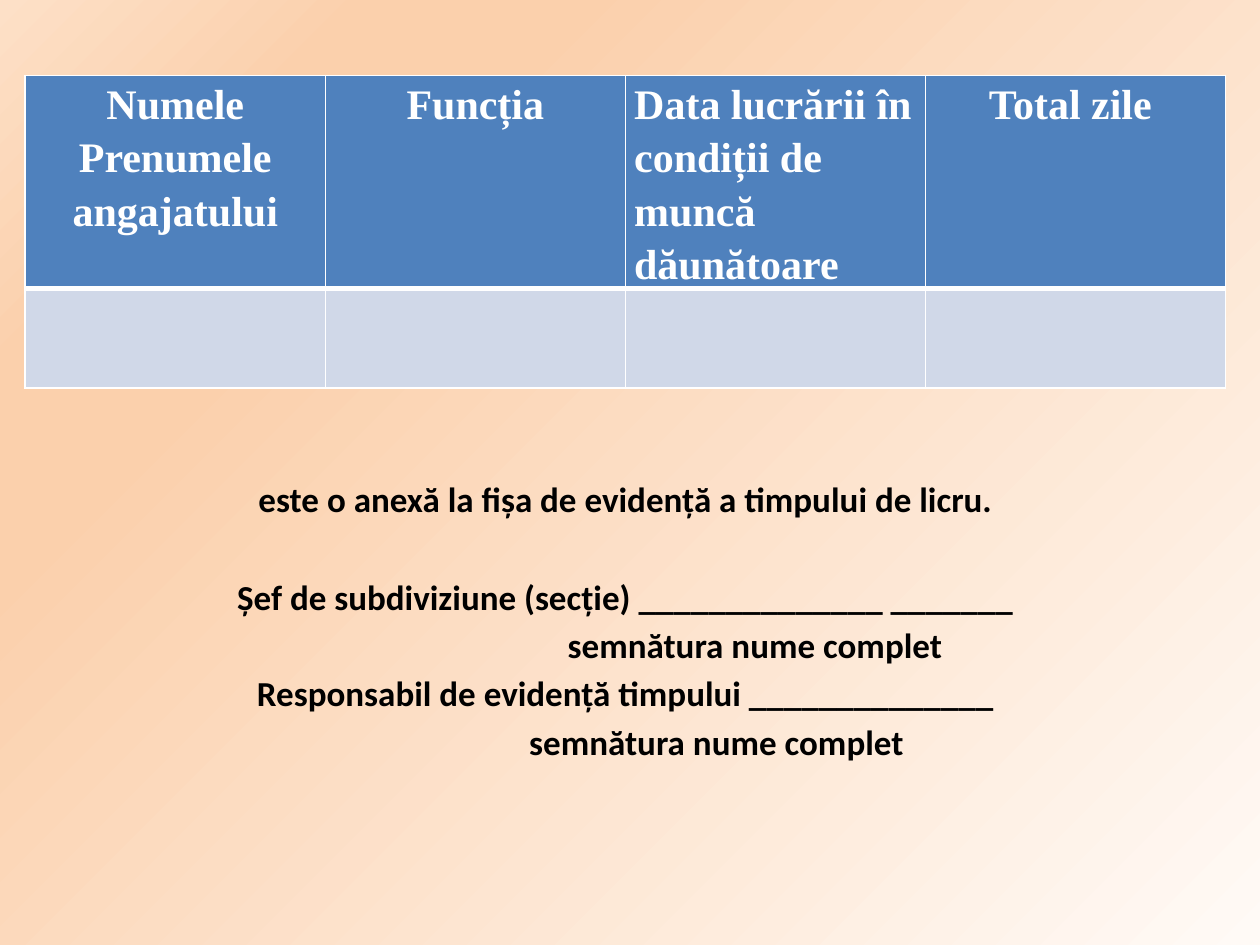
from dataclasses import dataclass

from lxml import etree
from pptx import Presentation
from pptx import util as u
from pptx.dml.color import RGBColor
from pptx.enum import text
from pptx.oxml import ns, parse_xml

WHITE = RGBColor(0xFF, 0xFF, 0xFF)
BLACK = RGBColor(0x00, 0x00, 0x00)
HEADER_BLUE = RGBColor(0x4F, 0x81, 0xBD)
ROW_BLUE = RGBColor(0xD0, 0xD8, 0xE8)
# Gradient stops: position in percent and colour
BACKGROUND_STOPS = [
    (0, RGBColor(0xFF, 0xFA, 0xF6)),
    (74, RGBColor(0xFB, 0xD0, 0xAC)),
    (83, RGBColor(0xFB, 0xD0, 0xAC)),
    (100, RGBColor(0xFD, 0xE0, 0xC7)),
]
LEFT, WIDTH = u.Pt(14.4), u.Pt(686)
CENTER, START = text.PP_ALIGN.CENTER, text.PP_ALIGN.LEFT


@dataclass
class Heading:
    label: str
    align: text.PP_ALIGN = CENTER


@dataclass
class Line:
    label: str
    before: float = 3.6
    indent: float = 0


HEADINGS = [
    Heading("Numele Prenumele angajatului"),
    Heading("Funcția"),
    Heading("Data lucrării în condiții de muncă dăunătoare", START),
    Heading("Total zile "),
]
LINES = [
    Line("este o anexă la fișa de evidență a timpului de licru.", before=0),
    Line("Șef de subdiviziune (secție) ______________ _______", before=31.6),
    Line("semnătura nume complet", indent=148),
    Line("Responsabil de evidență timpului ______________"),
    Line("semnătura nume complet", indent=104),
]


def write(para, words: str, *, font: str, size: float, color: RGBColor,
          align=CENTER, before: float = 0, spacing: float = 1.0) -> None:
    """Put bold text into a paragraph."""
    para.alignment = align
    para.space_before = u.Pt(before)
    para.line_spacing = spacing
    span = para.add_run()
    span.text = words
    span.font.name, span.font.size, span.font.bold = font, u.Pt(size), True
    span.font.color.rgb = color


def paint_background(page) -> None:
    stops = "".join(
        f'<a:gs pos="{position * 1000}"><a:srgbClr val="{color}"/></a:gs>'
        for position, color in BACKGROUND_STOPS)
    page.element.cSld.insert(0, parse_xml(
        f'<p:bg {ns.nsdecls("p", "a")}><p:bgPr><a:gradFill rotWithShape="1">'
        f'<a:gsLst>{stops}</a:gsLst><a:path path="circle">'
        '<a:fillToRect l="100000" t="100000"/></a:path></a:gradFill>'
        '<a:effectLst/></p:bgPr></p:bg>'))


def style_cell(cell, fill: RGBColor, top: float, bottom: float) -> None:
    """Set fill, margins and white borders."""
    cell.fill.solid()
    cell.fill.fore_color.rgb = fill
    cell.margin_left = cell.margin_right = u.Pt(5)
    cell.margin_top = cell.margin_bottom = 0
    borders = {"lnL": 1, "lnR": 1, "lnT": top, "lnB": bottom}
    properties = cell._tc.get_or_add_tcPr()
    for index, (side, width) in enumerate(borders.items()):
        properties.insert(index, parse_xml(
            f'<a:{side} {ns.nsdecls("a")} w="{u.Pt(width)}"><a:solidFill>'
            f'<a:srgbClr val="{WHITE}"/></a:solidFill></a:{side}>'))


def add_days_table(page) -> None:
    heights = [121.7, 56.8]
    table = page.shapes.add_table(
        2, len(HEADINGS), LEFT, u.Pt(43), WIDTH, u.Pt(sum(heights))).table
    for row, height in zip(table.rows, heights):
        row.height = u.Pt(height)
    for column, heading in enumerate(HEADINGS):
        head, blank = table.cell(0, column), table.cell(1, column)
        style_cell(head, HEADER_BLUE, top=1, bottom=3)
        style_cell(blank, ROW_BLUE, top=3, bottom=1)
        write(head.text_frame.paragraphs[0], heading.label,
              font="Times New Roman", size=24, color=WHITE,
              align=heading.align, spacing=1.15)


def fill_signatures(box) -> None:
    box.left, box.top, box.width, box.height = LEFT, u.Pt(273), WIDTH, u.Pt(240)
    frame = box.text_frame
    frame.word_wrap = True
    frame.auto_size = text.MSO_AUTO_SIZE.NONE
    frame.vertical_anchor = text.MSO_ANCHOR.TOP
    frame.margin_left = frame.margin_right = u.Pt(3.6)
    frame.margin_top = frame.margin_bottom = 0
    for index, line in enumerate(LINES):
        para = frame.add_paragraph() if index else frame.paragraphs[0]
        properties = para._p.get_or_add_pPr()
        properties.set("marL", str(u.Pt(line.indent)))
        properties.set("indent", "0")
        etree.SubElement(properties, ns.qn("a:buNone"))
        write(para, line.label, font="Calibri", size=20, color=BLACK,
              before=line.before)


def main() -> None:
    deck = Presentation()
    deck.slide_width, deck.slide_height = u.Pt(720), u.Pt(540)
    page = deck.slides.add_slide(deck.slide_layouts[1])
    paint_background(page)

    # The page has body text but no title
    title = page.shapes.title.element
    title.getparent().remove(title)
    fill_signatures(page.placeholders[1])
    add_days_table(page)
    deck.save("out.pptx")


if __name__ == "__main__":
    main()
